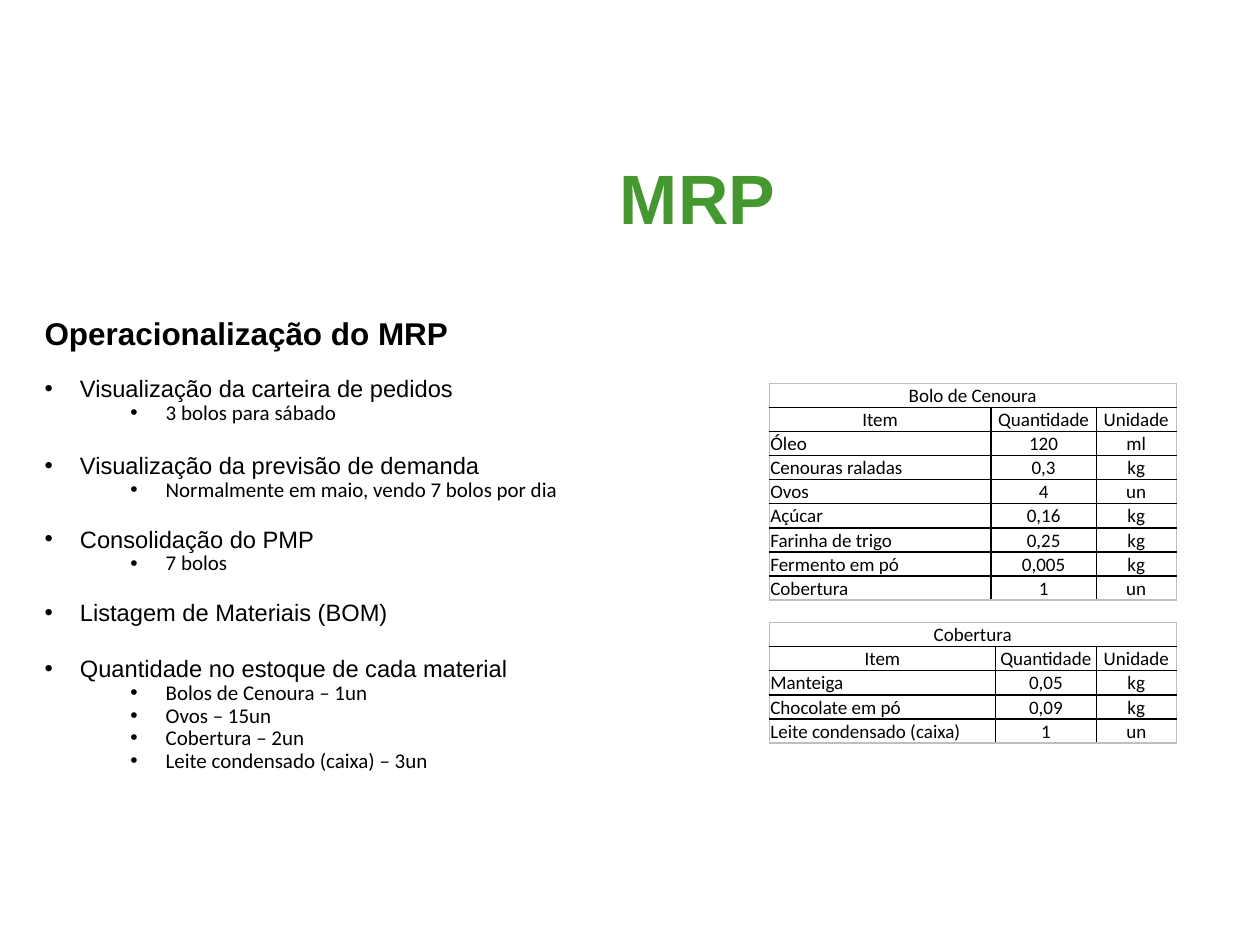
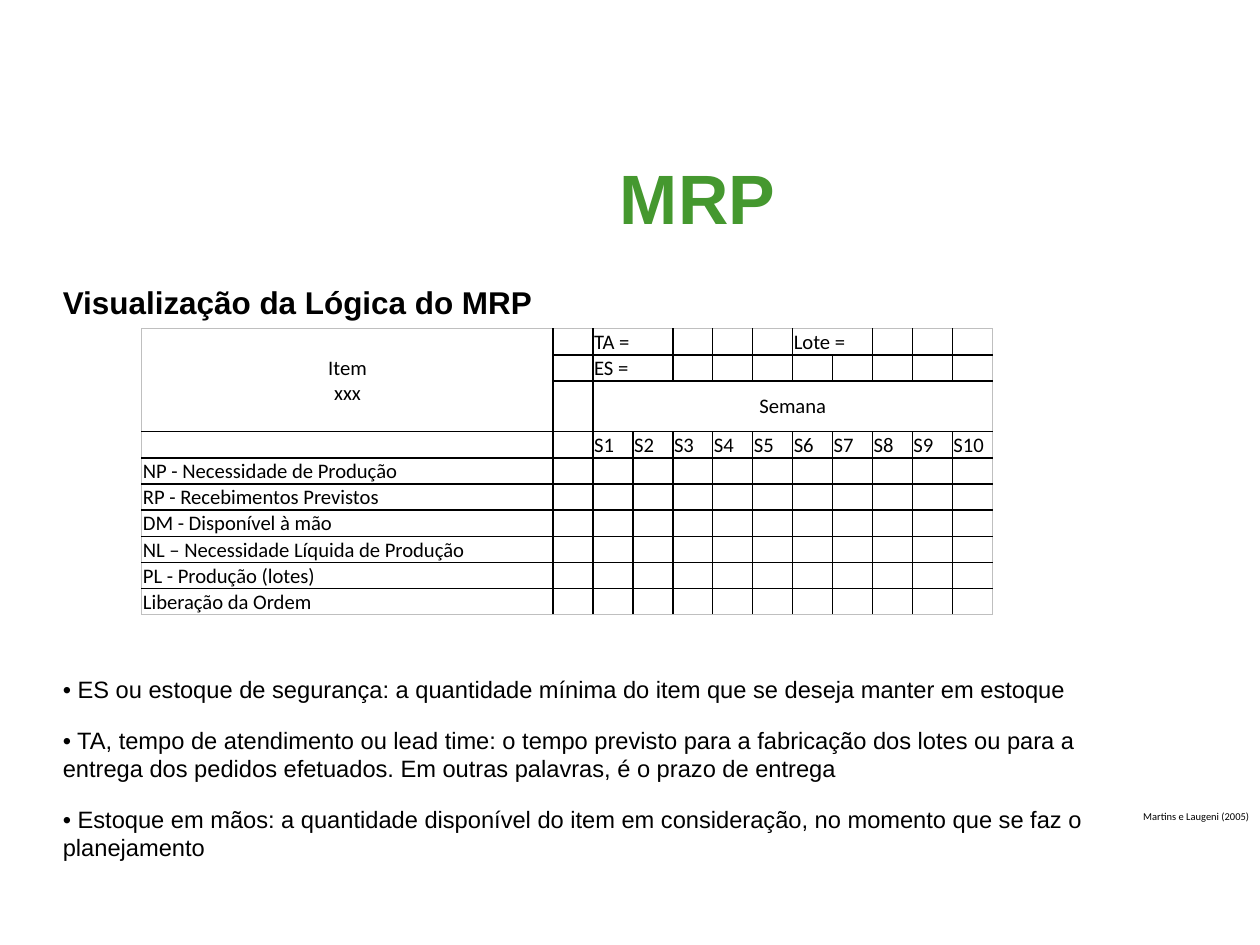
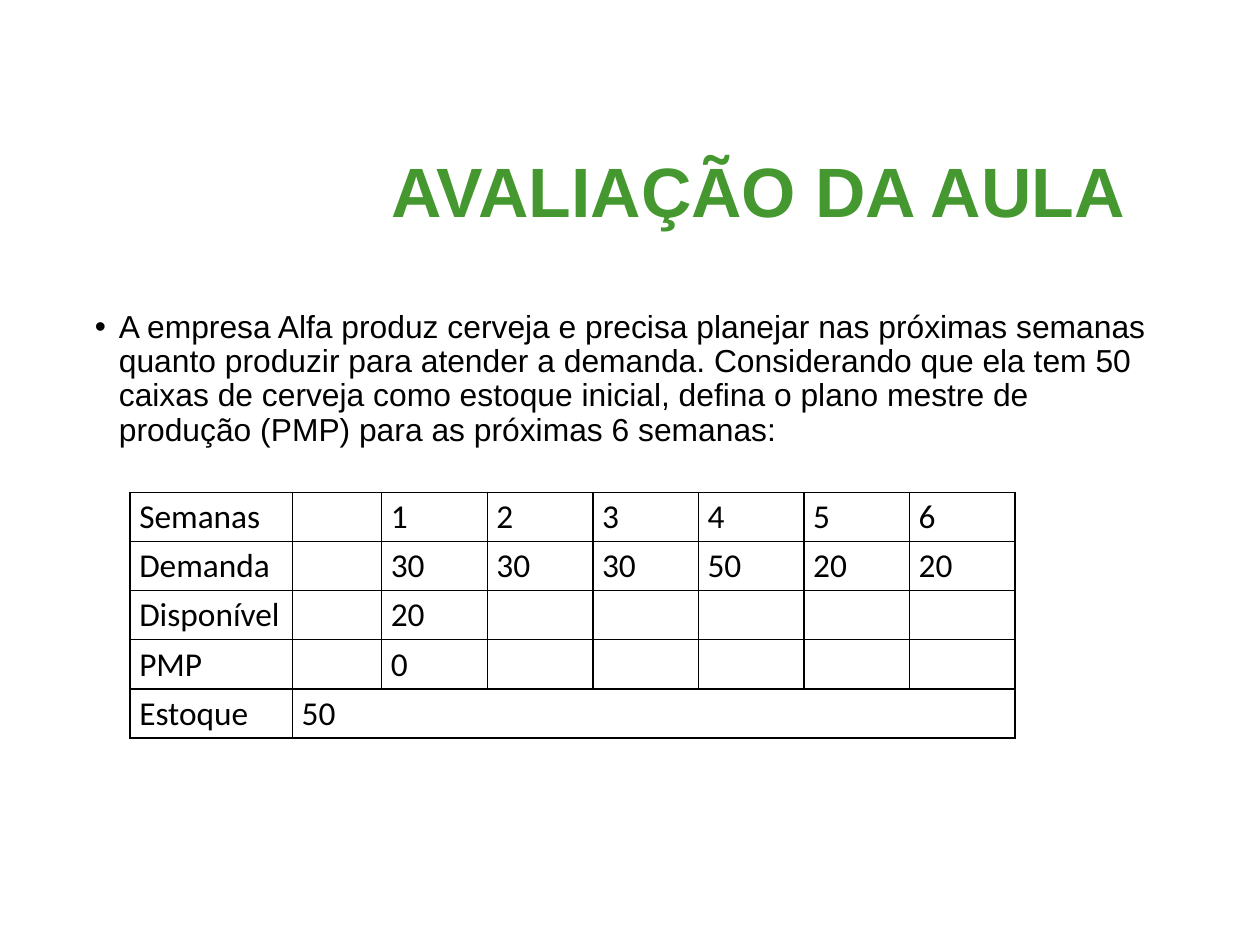
from dataclasses import dataclass
from typing import Callable, NamedTuple

from lxml import etree
from pptx import Presentation
from pptx import util as u
from pptx.dml.color import RGBColor
from pptx.enum import text
from pptx.oxml.ns import qn


@dataclass(frozen=True)
class Theme:
    width: u.Length = u.Cm(28)
    height: u.Length = u.Cm(21)
    heading_font: str = "Arial"
    detail_font: str = "Calibri"
    green: str = "45982F"
    black: str = "000000"
    white: str = "FFFFFF"
    frame: str = "BFBFBF"
    title: float = 44
    heading: float = 19.8
    question: float = 20
    item: float = 14.9
    detail: float = 13.2
    note: float = 6.6
    small_table: float = 12
    plan_table: float = 13
    large_table: float = 21
    heading_gap: float = 14.1
    tight: float = 0.9


THEME = Theme()


class Area(NamedTuple):
    left: float
    top: float
    width: float
    height: float


class Insets(NamedTuple):
    left: float
    top: float
    right: float
    bottom: float


NO_INSETS = Insets(0, 0, 0, 0)
BOX_INSETS = Insets(0.07, 0.04, 0.07, 0.04)
NOTE_INSETS = Insets(0.1, 0.05, 0.1, 0.05)
CELL_INSETS = Insets(0.01, 0.01, 0.01, 0)
WIDE_INSETS = Insets(0.08, 0.04, 0.08, 0.04)


@dataclass(frozen=True)
class Line:
    words: str
    size: float
    font: str = THEME.heading_font
    color: str = THEME.black
    bold: bool = False
    align: text.PP_ALIGN = text.PP_ALIGN.LEFT
    before: float = 0
    after: float = 0
    spacing: float = 1
    level: int = 0
    indent: float = 0
    hanging: float = 0


@dataclass(frozen=True)
class Grid:
    left: float
    top: float
    columns: tuple[float, ...]
    row: float
    cells: tuple[tuple[str, ...], ...]
    size: float
    centered: Callable[[int, int], bool]
    merges: tuple[tuple[int, int, int, int], ...] = ()
    insets: Insets = CELL_INSETS
    anchor: text.MSO_ANCHOR = text.MSO_ANCHOR.MIDDLE
    frame: str = THEME.frame
    filled: bool = True


def across(share: float) -> u.Emu:
    return u.Emu(round(THEME.width * share / 100))


def down(share: float) -> u.Emu:
    return u.Emu(round(THEME.height * share / 100))


def style_run(span, size: float, font: str, color: str, bold: bool = False) -> None:
    span.font.size = u.Pt(size)
    span.font.name = font
    span.font.bold = bold
    span.font.color.rgb = RGBColor.from_string(color)


def add_bullet(para, line: Line) -> None:
    properties = para._p.get_or_add_pPr()
    properties.set("marL", str(u.Inches(line.indent)))
    properties.set("indent", str(-u.Inches(line.hanging)))
    font = etree.SubElement(properties, qn("a:buFont"))
    font.set("typeface", THEME.heading_font)
    etree.SubElement(properties, qn("a:buChar")).set("char", "•")


def add_text(page, area: Area, lines: list[Line], insets: Insets = NO_INSETS,
             anchor: text.MSO_ANCHOR = text.MSO_ANCHOR.TOP, wrap: bool = True) -> None:
    box = page.shapes.add_textbox(across(area.left), down(area.top),
                                  across(area.width), down(area.height))
    frame = box.text_frame
    frame.word_wrap = wrap
    frame.vertical_anchor = anchor
    (frame.margin_left, frame.margin_top,
     frame.margin_right, frame.margin_bottom) = map(u.Inches, insets)
    for index, line in enumerate(lines):
        para = frame.add_paragraph() if index else frame.paragraphs[0]
        para.text = line.words
        para.alignment = line.align
        para.level = line.level
        para.line_spacing = line.spacing
        para.space_before = u.Pt(line.before)
        para.space_after = u.Pt(line.after)
        if line.hanging:
            add_bullet(para, line)
        for span in para.runs:
            style_run(span, line.size, line.font, line.color, line.bold)


def add_title(page, words: str, area: Area = Area(15.7, 12.5, 79.31, 16.69),
              insets: Insets = NO_INSETS, spacing: float = 1) -> None:
    line = Line(words, THEME.title, color=THEME.green, bold=True,
                align=text.PP_ALIGN.CENTER, spacing=spacing)
    add_text(page, area, [line], insets, text.MSO_ANCHOR.MIDDLE)


def add_border(cell, side: str, color: str) -> None:
    edge = etree.SubElement(cell._tc.get_or_add_tcPr(), qn(f"a:ln{side}"))
    edge.set("w", str(u.Pt(1)))
    fill = etree.SubElement(edge, qn("a:solidFill"))
    etree.SubElement(fill, qn("a:srgbClr")).set("val", color)


def format_cell(cell, words: str, grid: Grid, centered: bool) -> None:
    (cell.margin_left, cell.margin_top,
     cell.margin_right, cell.margin_bottom) = map(u.Inches, grid.insets)
    cell.vertical_anchor = grid.anchor
    if grid.filled:
        cell.fill.solid()
        cell.fill.fore_color.rgb = RGBColor.from_string(THEME.white)
    else:
        cell.fill.background()
    para = cell.text_frame.paragraphs[0]
    para.alignment = text.PP_ALIGN.CENTER if centered else text.PP_ALIGN.LEFT
    if words:
        para.text = words
        for span in para.runs:
            style_run(span, grid.size, THEME.detail_font, THEME.black)
    else:
        ending = etree.SubElement(para._p, qn("a:endParaRPr"))
        ending.set("sz", str(round(grid.size * 100)))


def add_grid(page, grid: Grid) -> None:
    rows, columns = len(grid.cells), len(grid.columns)
    table = page.shapes.add_table(rows, columns, across(grid.left), down(grid.top),
                                  across(sum(grid.columns)), down(grid.row * rows)).table
    table.first_row = False
    table.horz_banding = False
    for column, share in zip(table.columns, grid.columns):
        column.width = across(share)
    for row in table.rows:
        row.height = down(grid.row)
    for top, left, bottom, right in grid.merges:
        table.cell(top, left).merge(table.cell(bottom, right))
    for r, words in enumerate(grid.cells):
        padded = words + ("",) * (columns - len(words))
        for c, word in enumerate(padded):
            cell = table.cell(r, c)
            outer = {"L": c == 0, "R": c + cell.span_width == columns,
                     "T": r == 0, "B": r + cell.span_height == rows}
            for side, is_outer in outer.items():
                add_border(cell, side, grid.frame if is_outer else THEME.black)
            format_cell(cell, word, grid, grid.centered(r, c))


def heading(words: str, align: text.PP_ALIGN) -> Line:
    return Line(words, THEME.heading, bold=True, align=align, after=THEME.heading_gap)


def item(words: str, before: float = 0) -> Line:
    return Line(words, THEME.item, align=text.PP_ALIGN.JUSTIFY, before=before,
                indent=0.31, hanging=0.31)


def detail(words: str) -> Line:
    return Line(words, THEME.detail, THEME.detail_font, align=text.PP_ALIGN.JUSTIFY,
                spacing=THEME.tight, level=1, indent=1.06, hanging=0.31)


def recipe(name: str, top: float, columns: tuple[float, ...], filled: bool,
           parts: tuple[tuple[str, ...], ...]) -> Grid:
    return Grid(61.05, top, columns, 2.54,
                ((name,), ("Item", "Quantidade", "Unidade")) + parts,
                THEME.small_table, lambda r, c: r < 2 or c > 0,
                merges=((0, 0, 0, 2),), anchor=text.MSO_ANCHOR.BOTTOM, filled=filled)


def build_operation(page) -> None:
    add_title(page, "MRP")
    add_text(page, Area(3.54, 33.2, 91.47, 47.64), [
        heading("Operacionalização do MRP", text.PP_ALIGN.JUSTIFY),
        item("Visualização da carteira de pedidos"),
        detail("3 bolos para sábado"),
        item("Visualização da previsão de demanda", 16.4),
        detail("Normalmente em maio, vendo 7 bolos por dia"),
        item("Consolidação do PMP", 14.2),
        detail("7 bolos"),
        item("Listagem de Materiais (BOM)", 14.2),
        item("Quantidade no estoque de cada material", 17.4),
        detail("Bolos de Cenoura – 1un"),
        detail("Ovos – 15un"),
        detail("Cobertura – 2un"),
        detail("Leite condensado (caixa) – 3un"),
    ])
    add_grid(page, recipe("Bolo de Cenoura", 40.6, (17.6, 8.35, 6.35), False, (
        ("Óleo", "120", "ml"),
        ("Cenouras raladas", "0,3", "kg"),
        ("Ovos", "4", "un"),
        ("Açúcar", "0,16", "kg"),
        ("Farinha de trigo", "0,25", "kg"),
        ("Fermento em pó", "0,005", "kg"),
        ("Cobertura", "1", "un"),
    )))
    add_grid(page, recipe("Cobertura", 65.9, (17.97, 7.99, 6.35), True, (
        ("Manteiga", "0,05", "kg"),
        ("Chocolate em pó", "0,09", "kg"),
        ("Leite condensado (caixa)", "1", "un"),
    )))


def build_logic(page) -> None:
    add_title(page, "MRP")
    definitions = (
        "• ES ou estoque de segurança: a quantidade mínima do item que se deseja "
        "manter em estoque",
        "• TA, tempo de atendimento ou lead time: o tempo previsto para a fabricação "
        "dos lotes ou para a entrega dos pedidos efetuados. Em outras palavras, é o "
        "prazo de entrega",
        "• Estoque em mãos: a quantidade disponível do item em consideração, no "
        "momento que se faz o planejamento",
    )
    table_gap = 209
    add_text(page, Area(4.99, 29.95, 80.85, 49.46), [
        heading("Visualização da Lógica do MRP", text.PP_ALIGN.LEFT),
        *(Line(words, THEME.item, before=0 if index else table_gap,
               after=THEME.heading_gap)
          for index, words in enumerate(definitions)),
    ])
    weeks = tuple(f"S{week}" for week in range(1, 11))
    plan_rows = ("NP - Necessidade de Produção", "RP - Recebimentos Previstos",
                 "DM - Disponível à mão", "NL – Necessidade Líquida de Produção",
                 "PL - Produção (lotes)", "Liberação da Ordem")
    add_grid(page, Grid(
        11.25, 34.78, (32.65,) + (3.17,) * 11, 2.77,
        (("Item\nxxx", "", "TA =", "", "", "", "", "Lote ="),
         ("", "", "ES ="),
         ("", "", "Semana"),
         ("", "") + weeks,
         *((name,) for name in plan_rows)),
        THEME.plan_table, lambda r, c: (r, c) in ((0, 0), (2, 2)),
        merges=((0, 0, 2, 0), (0, 2, 0, 3), (0, 7, 0, 8), (1, 2, 1, 3), (2, 2, 2, 11))))
    add_text(page, Area(89.84, 85.08, 10.34, 2.54),
             [Line("Martins e Laugeni (2005)", THEME.note, THEME.detail_font)],
             NOTE_INSETS, wrap=False)


def build_exercise(page) -> None:
    add_title(page, "AVALIAÇÃO DA AULA", Area(21.6, 13.37, 77.22, 14.51),
              BOX_INSETS, THEME.tight)
    question = ("A empresa Alfa produz cerveja e precisa planejar nas próximas semanas "
                "quanto produzir para atender a demanda. Considerando que ela tem 50 "
                "caixas de cerveja como estoque inicial, defina o plano mestre de "
                "produção (PMP) para as próximas 6 semanas:")
    add_text(page, Area(6.9, 32.41, 86.3, 47.52),
             [Line(question, THEME.question, spacing=THEME.tight,
                   indent=0.21, hanging=0.21)], BOX_INSETS)
    add_grid(page, Grid(
        10.33, 52.1, (12.89, 7.08) + (8.38,) * 6, 5.15,
        (("Semanas", "", "1", "2", "3", "4", "5", "6"),
         ("Demanda", "", "30", "30", "30", "50", "20", "20"),
         ("Disponível", "", "20"),
         ("PMP", "", "0"),
         ("Estoque", "50")),
        THEME.large_table, lambda r, c: False, merges=((4, 1, 4, 7),),
        insets=WIDE_INSETS, anchor=text.MSO_ANCHOR.TOP, frame=THEME.black,
        filled=False))


def main() -> None:
    deck = Presentation()
    deck.slide_width = THEME.width
    deck.slide_height = THEME.height
    for build in (build_operation, build_logic, build_exercise):
        build(deck.slides.add_slide(deck.slide_layouts[6]))
    deck.save("out.pptx")


if __name__ == "__main__":
    main()
